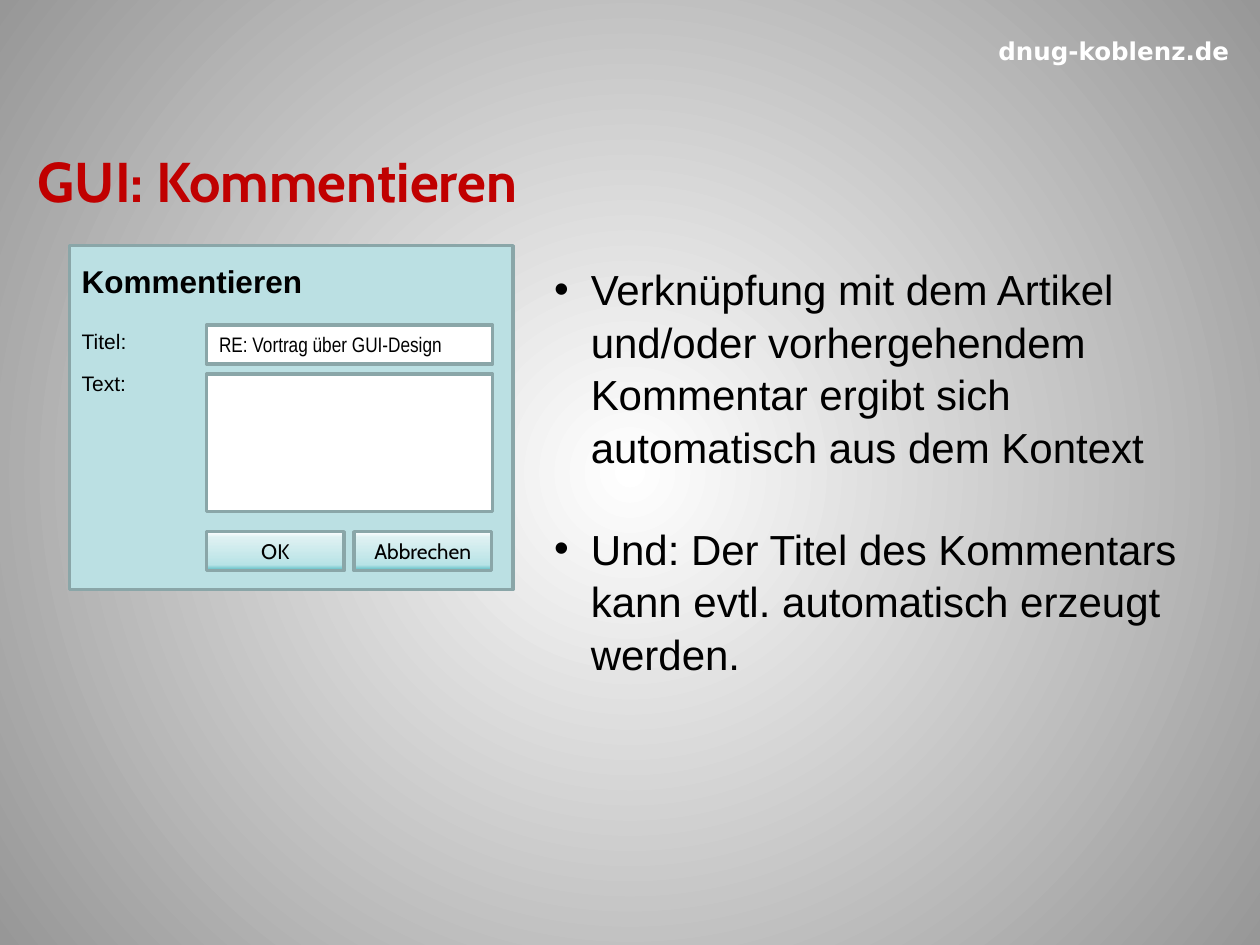
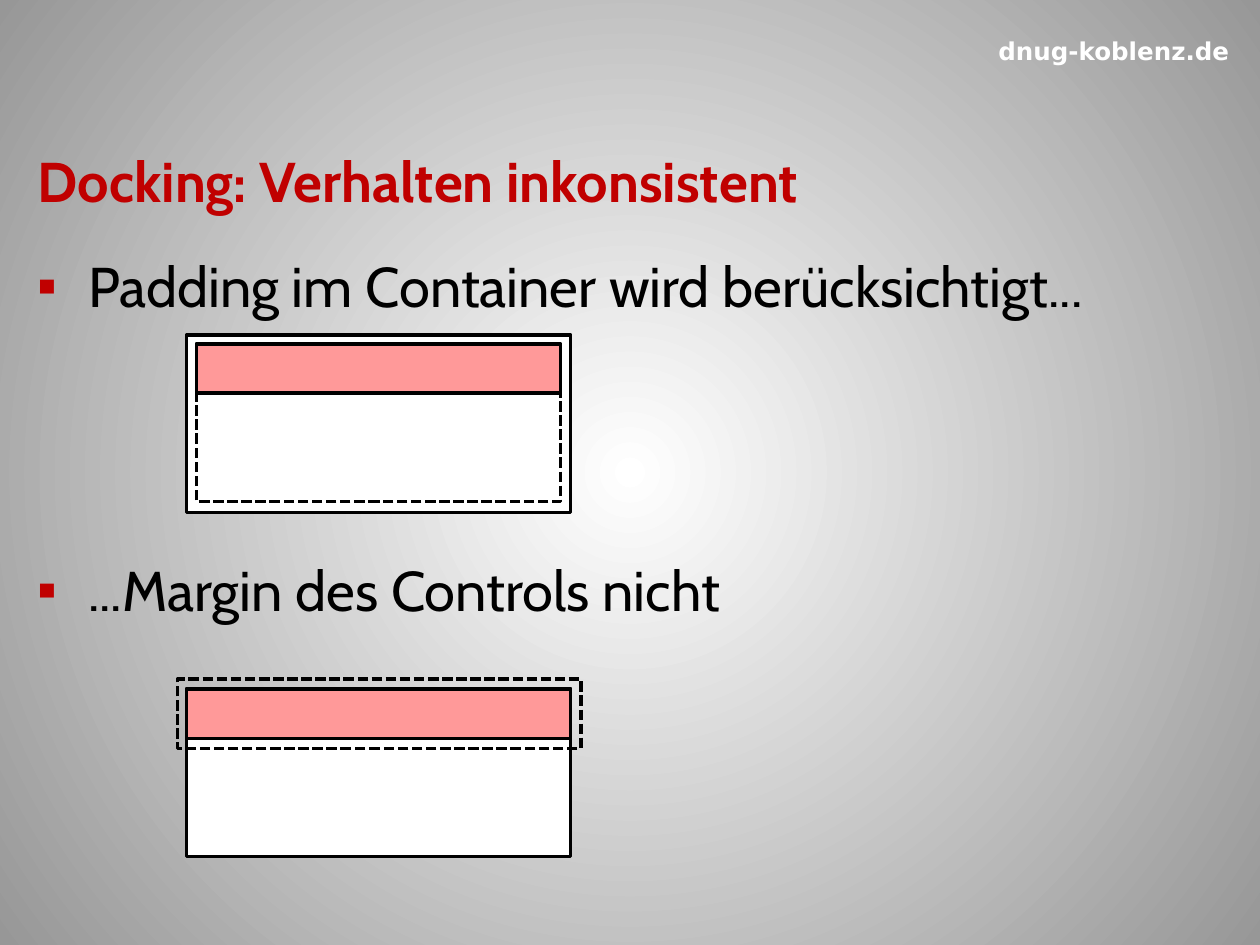
from pptx import Presentation
from pptx.dml.color import RGBColor
from pptx.enum.dml import MSO_LINE_DASH_STYLE as Dash
from pptx.enum.shapes import MSO_SHAPE as Kind
from pptx.enum.text import MSO_ANCHOR as Anchor, MSO_AUTO_SIZE as Fit, PP_ALIGN as Align
from pptx.oxml import parse_xml
from pptx.oxml.ns import nsdecls, qn
from pptx.util import Inches, Pt

RED = RGBColor(0xC0, 0x00, 0x00)
BLACK = RGBColor(0x00, 0x00, 0x00)
WHITE = RGBColor(0xFF, 0xFF, 0xFF)
TEAL = RGBColor(0xBB, 0xE0, 0xE3)
SLATE = RGBColor(0x8A, 0xA6, 0xA8)
PINK = RGBColor(0xFF, 0x99, 0x99)
NS = nsdecls("a")


def write(shape, text, size=12, font="Arial", color=BLACK, bold=False,
          align=Align.LEFT, anchor=Anchor.TOP, mark=None, hang=0, gap=0, lead=None):
    """Fill a shape with text, one paragraph a line; mark is a bullet sign."""
    frame = shape.text_frame
    frame.word_wrap = True
    frame.auto_size = Fit.NONE
    frame.vertical_anchor = anchor
    for i, line in enumerate(text.split("\n")):
        para = frame.add_paragraph() if i else frame.paragraphs[0]
        para.alignment = align
        if mark:
            props = para._p.get_or_add_pPr()
            props.set("marL", str(Inches(hang)))
            props.set("indent", str(-Inches(hang)))
            tint = RED if mark == "▪" else color
            for xml in (f'<a:buClr {NS}><a:srgbClr val="{tint}"/></a:buClr>',
                        f'<a:buFont {NS} typeface="Arial"/>',
                        f'<a:buChar {NS} char="{mark}"/>'):
                props.append(parse_xml(xml))
        if lead:
            para.line_spacing = lead
        if i:
            para.space_before = Pt(gap)
        run = para.add_run()
        run.text = line
        run.font.size = Pt(size)
        run.font.name = font
        run.font.bold = bold
        run.font.color.rgb = color


def box(shapes, x, y, w, h, fill=None, line=BLACK, dash=None):
    """Draw a rectangle with a two-point outline."""
    rect = shapes.add_shape(Kind.RECTANGLE, Inches(x), Inches(y), Inches(w), Inches(h))
    rect.shadow.inherit = False
    if fill is None:
        rect.fill.background()
    else:
        rect.fill.solid()
        rect.fill.fore_color.rgb = fill
    rect.line.color.rgb = line
    rect.line.width = Pt(2)
    if dash:
        rect.line.dash_style = dash
    return rect


prs = Presentation()
prs.slide_width, prs.slide_height = Inches(10), Inches(7.5)

# Shared backdrop, with its gradient filled in at the end
master = prs.slide_master
master.background.fill.gradient()
glow = '<a:path path="circle"><a:fillToRect l="50000" t="50000" r="50000" b="50000"/></a:path>'
grads = [(master, [(0, WHITE), (100, "979797")], glow)]

# Shared header and title
slides = []
for head in ("GUI: Kommentieren", "Docking: Verhalten inkonsistent"):
    slide = prs.slides.add_slide(prs.slide_layouts[5])
    site = slide.shapes.add_textbox(Inches(7.68), Inches(0.21), Inches(2.32), Inches(0.39))
    write(site, "dnug-koblenz.de", size=14, font="DejaVu Sans", color=WHITE, bold=True,
          align=Align.CENTER, anchor=Anchor.MIDDLE)
    title = slide.shapes.title
    title.left, title.top = Inches(0.2), Inches(0.91)
    title.width, title.height = Inches(9.61), Inches(1.04)
    write(title, head, size=32, font="Cabin", color=RED, bold=True, anchor=Anchor.MIDDLE)
    props = title.text_frame.paragraphs[0].runs[0].font._element
    props.find(qn("a:solidFill")).addnext(parse_xml(
        f'<a:effectLst {NS}><a:outerShdw blurRad="38100" dist="38100" dir="2700000">'
        '<a:srgbClr val="000000"/></a:outerShdw></a:effectLst>'))
    slides.append(slide)

# Slide 1: comment dialog
shapes = slides[0].shapes
box(shapes, 0.55, 1.95, 3.52, 2.73, TEAL, SLATE)
for text, y, w, h, size in (("Kommentieren", 2.03, 2.97, 0.4, 18),
                            ("Titel:", 2.56, 0.78, 0.3, 12),
                            ("Text:", 2.89, 0.78, 0.3, 12)):
    label = shapes.add_textbox(Inches(0.55), Inches(y), Inches(w), Inches(h))
    write(label, text, size=size, bold=size == 18)

field = box(shapes, 1.64, 2.58, 2.27, 0.31, WHITE, SLATE)
write(field, "RE: Vortrag über GUI-Design", font="Arial Narrow", anchor=Anchor.MIDDLE)
box(shapes, 1.64, 2.97, 2.27, 1.09, WHITE, SLATE)

for i, text in enumerate(("OK", "Abbrechen")):
    button = box(shapes, 1.64 + 1.17 * i, 4.22, 1.09, 0.31, TEAL, SLATE)
    button.fill.gradient()
    write(button, text, font="Cabin", align=Align.CENTER, anchor=Anchor.MIDDLE)
    grads.append((button, [(0, WHITE), (15, "DEF1F2"), (85, "B8E3E6"), (100, "50B8C0")],
                  '<a:lin ang="5400000" scaled="0"/>'))

notes = shapes.add_textbox(Inches(4.3), Inches(2.03), Inches(5.31), Inches(3.33))
write(notes, "Verknüpfung mit dem Artikel und/oder vorhergehendem Kommentar ergibt sich "
      "automatisch aus dem Kontext\n"
      "Und: Der Titel des Kommentars kann evtl. automatisch erzeugt werden.",
      size=24, mark="•", hang=0.29, gap=28.5, lead=1.04)

# Slide 2: docking behaviour
shapes = slides[1].shapes
body = shapes.add_textbox(Inches(0.2), Inches(1.95), Inches(9.61), Inches(5.55))
write(body, "Padding im Container wird berücksichtigt...\n...Margin des Controls nicht",
      size=32, font="Cabin", mark="▪", hang=0.4, gap=135)

# Each sketch: container, dashed limit, docked control
for frame, limit, dock in (
        ((1.48, 2.66, 3.05, 1.41), (1.56, 2.73, 2.89, 1.25), (1.56, 2.73, 2.89, 0.39)),
        ((1.48, 5.47, 3.05, 1.33), (1.41, 5.39, 3.2, 0.55), (1.48, 5.47, 3.05, 0.39))):
    group = shapes.add_group_shape().shapes
    box(group, *frame, fill=WHITE)
    box(group, *limit, dash=Dash.SQUARE_DOT)
    box(group, *dock, fill=PINK)

# Gradient stops and directions
for item, stops, course in grads:
    grad = item._element.find(".//" + qn("a:gradFill"))
    marks = "".join(f'<a:gs pos="{pos * 1000}"><a:srgbClr val="{tone}"/></a:gs>'
                    for pos, tone in stops)
    grad.getparent().replace(grad, parse_xml(
        f'<a:gradFill {NS} rotWithShape="1"><a:gsLst>{marks}</a:gsLst>{course}</a:gradFill>'))

prs.save("out.pptx")
